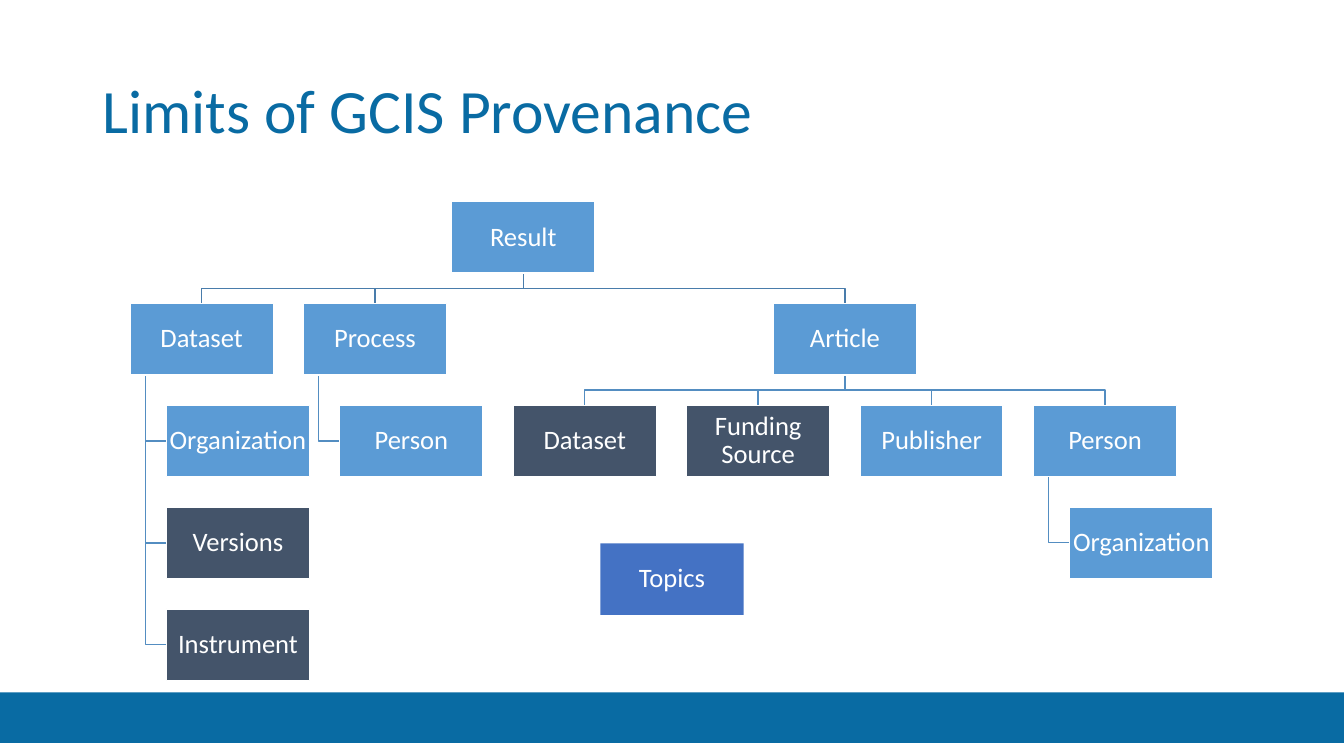
from dataclasses import dataclass, field

from pptx import Presentation
from pptx.dml.color import RGBColor
from pptx.enum.shapes import MSO_SHAPE
from pptx.enum.text import MSO_ANCHOR, PP_ALIGN
from pptx.util import Inches, Pt

RECTANGLE = MSO_SHAPE.RECTANGLE
MIDDLE = MSO_ANCHOR.MIDDLE
LEFT, CENTER = PP_ALIGN.LEFT, PP_ALIGN.CENTER


@dataclass(frozen=True)
class Theme:
    font: str = "Calibri"
    title_size: int = 44
    box_size: int = 19
    brand: str = "096BA3"
    known: str = "5B9BD5"
    missing: str = "44546A"
    topics: str = "4472C4"
    white: str = "FFFFFF"
    root_line: str = "497CAB"
    branch_line: str = "538DC1"


THEME = Theme()

# Org chart measures, in inches
BOX_W, BOX_H, GAP = 1.42, 0.71, 0.3
INDENT = 0.36
TRUNK_INSET = 0.15


@dataclass
class Node:
    label: str
    children: list = field(default_factory=list)
    column: int = 0
    fill: str = THEME.known
    spread: bool = False  # children side by side instead of stacked
    x: float = 0
    y: float = 0


PROVENANCE = Node("Result", spread=True, children=[
    Node("Dataset", column=0, children=[
        Node("Organization"),
        Node("Versions", fill=THEME.missing),
        Node("Instrument", fill=THEME.missing),
    ]),
    Node("Process", column=1, children=[Node("Person")]),
    Node("Article", spread=True, children=[
        Node("Dataset", column=2, fill=THEME.missing),
        Node("Funding Source", column=3, fill=THEME.missing),
        Node("Publisher", column=4),
        Node("Person", column=5, children=[Node("Organization")]),
    ]),
])


def rgb(value):
    return RGBColor.from_string(value)


def write(shape, text, size, color, align, inset):
    frame = shape.text_frame
    frame.word_wrap = True
    frame.vertical_anchor = MIDDLE
    frame.margin_left = frame.margin_right = Inches(inset)
    frame.margin_top = frame.margin_bottom = Inches(0.01)
    paragraph = frame.paragraphs[0]
    paragraph.alignment = align
    paragraph.line_spacing = 0.9
    run = paragraph.add_run()
    run.text = text
    run.font.name = THEME.font
    run.font.size = Pt(size)
    run.font.color.rgb = rgb(color)


def add_rectangle(slide, box, fill, outline=None):
    rectangle = slide.shapes.add_shape(RECTANGLE, *map(Inches, box))
    rectangle.shadow.inherit = False
    rectangle.fill.solid()
    rectangle.fill.fore_color.rgb = rgb(fill)
    if outline:
        rectangle.line.color.rgb = rgb(outline)
        rectangle.line.width = Pt(1)
    else:
        rectangle.line.fill.background()
    return rectangle


def add_label_box(slide, box, label, fill, outline=None):
    rectangle = add_rectangle(slide, box, fill, outline)
    write(rectangle, label, THEME.box_size, THEME.white, CENTER, 0.01)


def add_elbow(slide, points, color):
    start, *corners = [(Inches(x), Inches(y)) for x, y in points]
    builder = slide.shapes.build_freeform(*start)
    builder.add_line_segments(corners, close=False)
    elbow = builder.convert_to_shape()
    elbow.shadow.inherit = False
    elbow.fill.background()
    elbow.line.color.rgb = rgb(color)
    elbow.line.width = Pt(1)


def place_tree(node, left, top, level=0):
    """Place a node and its descendants on the column grid."""
    node.x = left + node.column * (BOX_W + GAP) + (level - 1) * INDENT
    node.y = top
    for row, child in enumerate(node.children, start=1):
        if not node.spread:
            child.column = node.column
        child_row = 1 if node.spread else row
        place_tree(child, left, top + child_row * (BOX_H + GAP), level + 1)
    if node.spread:
        node.x = (node.children[0].x + node.children[-1].x) / 2


def draw_links(slide, node, color):
    bottom = node.y + BOX_H
    for child in node.children:
        draw_links(slide, child, THEME.branch_line)
        if node.spread:
            start, end = node.x + BOX_W / 2, child.x + BOX_W / 2
            turn = bottom + GAP / 2
            points = [(start, bottom), (start, turn), (end, turn), (end, child.y)]
        else:
            trunk, middle = node.x + TRUNK_INSET, child.y + BOX_H / 2
            points = [(trunk, bottom), (trunk, middle), (child.x, middle)]
        add_elbow(slide, points, color)


def draw_boxes(slide, node):
    add_label_box(slide, (node.x, node.y, BOX_W, BOX_H), node.label,
                  node.fill, THEME.white)
    for child in node.children:
        draw_boxes(slide, child)


def add_footer(slide, box):
    add_rectangle(slide, box, THEME.brand)


def add_title(slide, box, text):
    title = slide.shapes.add_textbox(*map(Inches, box))
    write(title, text, THEME.title_size, THEME.brand, LEFT, 0.1)


def add_org_chart(slide, box, root):
    left, top, width, height = box
    place_tree(root, left, top)
    # Links go behind the boxes
    draw_links(slide, root, THEME.root_line)
    draw_boxes(slide, root)
    # Topics stands apart from the tree, near the chart's middle
    add_label_box(slide, (left + (width - BOX_W) / 2, top + height - 1.36, BOX_W, BOX_H),
                  "Topics", THEME.topics)


def main():
    presentation = Presentation()
    presentation.slide_width = Inches(13.33)
    presentation.slide_height = Inches(7.5)
    slide = presentation.slides.add_slide(presentation.slide_layouts[6])
    add_footer(slide, (0, 6.87, 13.33, 0.5))
    add_title(slide, (0.92, 0.4, 11.5, 1.45), "Limits of GCIS Provenance")
    add_org_chart(slide, (1.29, 2, 10.75, 4.75), PROVENANCE)
    presentation.save("out.pptx")


if __name__ == "__main__":
    main()
